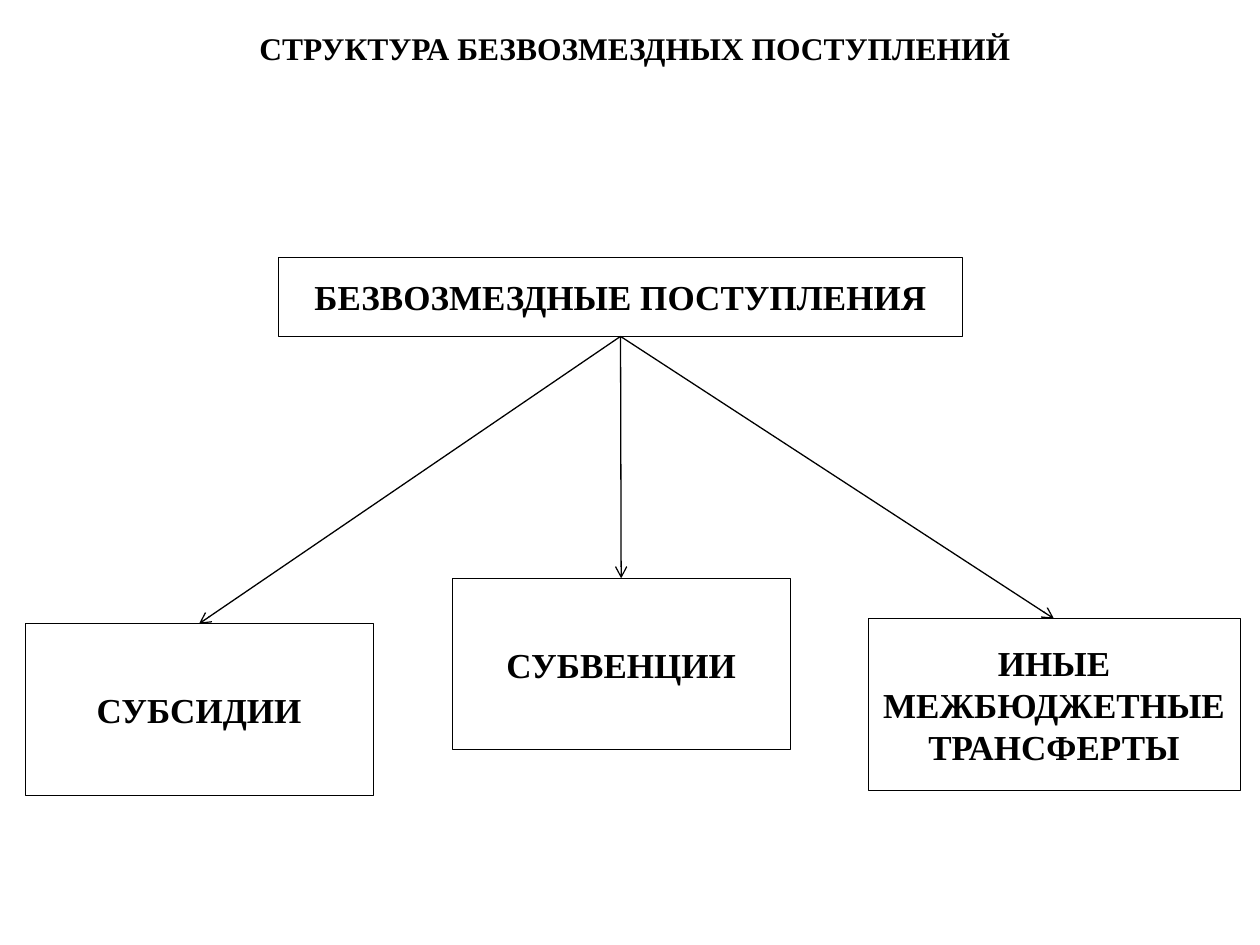
import pptx
import pptx.dml.color
import pptx.enum.shapes
import pptx.enum.text
import pptx.oxml
import pptx.oxml.ns
import pptx.util

presentation = pptx.Presentation()
presentation.slide_width = pptx.util.Inches(10)
presentation.slide_height = pptx.util.Inches(7.5)
column = presentation.slide_width / 100
row = presentation.slide_height / 100

BLACK = "000000"
WHITE = "FFFFFF"


def color(value):
    return pptx.dml.color.RGBColor.from_string(value)


def write(shape, box, text, size):
    """Place a shape at box (left, top, width, height in percent) and set its text."""
    left, top, width, height = box
    shape.left, shape.width = round(left * column), round(width * column)
    shape.top, shape.height = round(top * row), round(height * row)
    frame = shape.text_frame
    frame.word_wrap = True
    frame.auto_size = pptx.enum.text.MSO_AUTO_SIZE.NONE
    frame.vertical_anchor = pptx.enum.text.MSO_ANCHOR.MIDDLE
    frame.text = text
    paragraph = frame.paragraphs[0]
    paragraph.alignment = pptx.enum.text.PP_ALIGN.CENTER
    paragraph.font.name = "Times New Roman"
    paragraph.font.size = pptx.util.Pt(size)
    paragraph.font.bold = True
    paragraph.font.color.rgb = color(BLACK)


slide = presentation.slides.add_slide(presentation.slide_layouts[5])
write(slide.shapes.title, (13.8, 2.4, 73.2, 5.33),
      "СТРУКТУРА БЕЗВОЗМЕЗДНЫХ ПОСТУПЛЕНИЙ", 18)

# The total comes first, then the kinds it is made up of.
box_height = 18.13
boxes = [
    ("БЕЗВОЗМЕЗДНЫЕ ПОСТУПЛЕНИЯ", (22.1, 27.2, 54.3, 8.4)),
    ("СУБСИДИИ", (2, 66, 27.6, box_height)),
    ("СУБВЕНЦИИ", (35.9, 61.2, 26.8, box_height)),
    ("ИНЫЕ МЕЖБЮДЖЕТНЫЕ ТРАНСФЕРТЫ", (68.9, 65.47, 29.5, box_height)),
]
shapes = []
for text, box in boxes:
    shape = slide.shapes.add_shape(pptx.enum.shapes.MSO_SHAPE.RECTANGLE, 0, 0, 0, 0)
    shape.shadow.inherit = False
    shape.fill.solid()
    shape.fill.fore_color.rgb = color(WHITE)
    shape.line.color.rgb = color(BLACK)
    shape.line.width = pptx.util.Pt(0.25)
    write(shape, box, text, 20)
    shapes.append(shape)

TOP_SITE, BOTTOM_SITE = 0, 2
total, *kinds = shapes
for kind in kinds:
    arrow = slide.shapes.add_connector(
        pptx.enum.shapes.MSO_CONNECTOR.STRAIGHT, 0, 0, 0, 0)
    arrow.begin_connect(total, BOTTOM_SITE)
    arrow.end_connect(kind, TOP_SITE)
    arrow.line.color.rgb = color(BLACK)
    arrow.line.width = pptx.util.Pt(0.75)
    line = arrow.line._get_or_add_ln()
    line.append(pptx.oxml.parse_xml(
        f'<a:tailEnd {pptx.oxml.ns.nsdecls("a")} type="arrow"/>'))
    arrow._element.spPr.append(pptx.oxml.parse_xml(
        f'<a:effectLst {pptx.oxml.ns.nsdecls("a")}/>'))

presentation.save("out.pptx")
